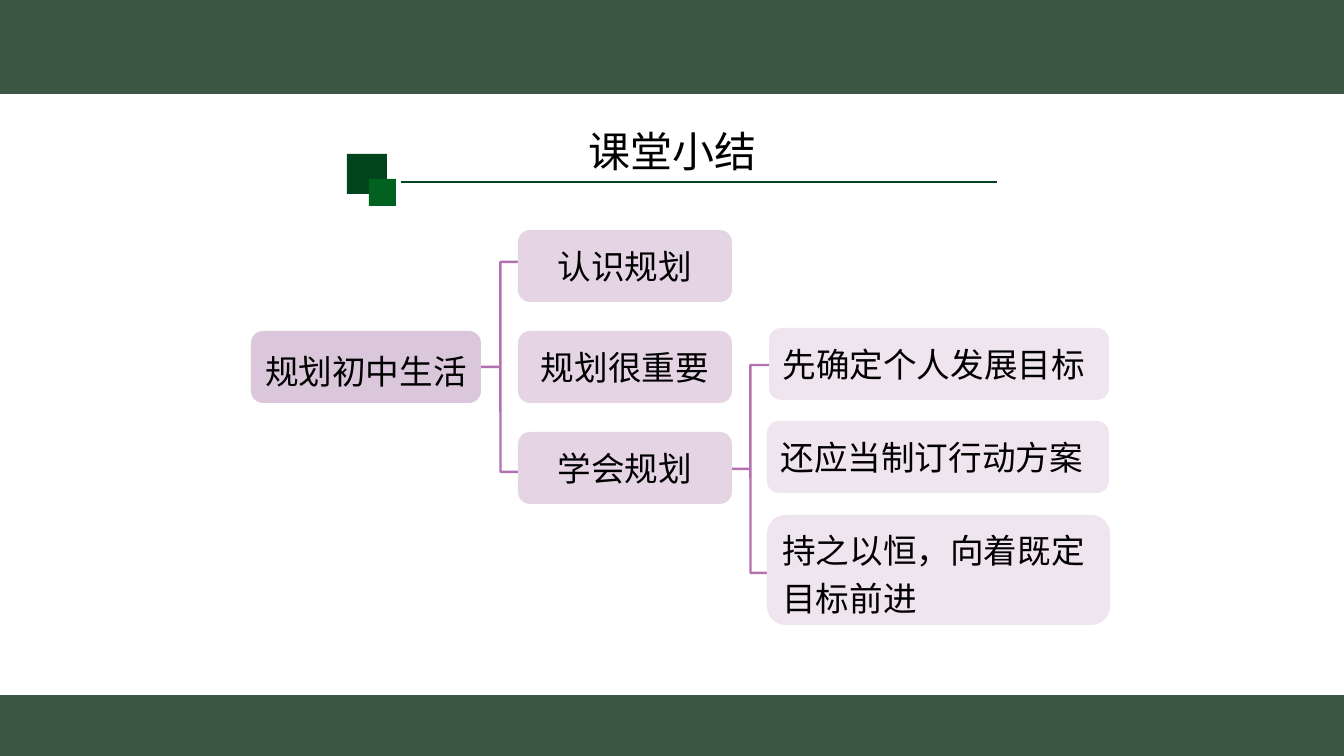
from lxml import etree
from pptx import Presentation
from pptx import util as u
from pptx.dml.color import RGBColor
from pptx.enum import shapes, text
from pptx.oxml.ns import qn

FONT = "Noto Sans CJK SC"
BAND, DARK, LEAF = "3B5643", "01431D", "01621F"
ROOT, BRANCH, DETAIL, BRACE = "DBC7DB", "E4D4E4", "EFE5EF", "B371AF"
WIDTH, HEIGHT = 1344, 756
LEFT, CENTER = text.PP_ALIGN.LEFT, text.PP_ALIGN.CENTER


def px(length):
    return u.Emu(round(length * 914400 / 100.8))


def color(value):
    return RGBColor.from_string(value)


class SummarySlide:
    def __init__(self, page):
        self.page = page

    def shape(self, kind, area, fill=None):
        shape = self.page.shapes.add_shape(kind, *map(px, area))
        shape.shadow.inherit = False
        shape.line.fill.background()
        if fill:
            shape.fill.solid()
            shape.fill.fore_color.rgb = color(fill)
        else:
            shape.fill.background()
        return shape

    def rect(self, area, fill):
        return self.shape(shapes.MSO_SHAPE.RECTANGLE, area, fill)

    def brace(self, area):
        """Left brace with square corners, which reads as a tree bracket."""
        brace = self.shape(shapes.MSO_SHAPE.LEFT_BRACE, area)
        brace.adjustments[0] = 0
        brace.line.color.rgb = color(BRACE)
        brace.line.width = u.Pt(1.75)

    def rule(self, x1, x2, y):
        rule = self.page.shapes.add_connector(
            shapes.MSO_CONNECTOR.STRAIGHT, *map(px, (x1, y, x2, y)))
        rule.line.color.rgb = color(DARK)
        rule.line.width = u.Pt(1)
        etree.SubElement(rule._element.spPr, qn("a:effectLst"))

    def fill_text(self, box, lines, size, **paragraph_format):
        frame = box.text_frame
        frame.word_wrap = True
        for index, line in enumerate(lines):
            para = frame.add_paragraph() if index else frame.paragraphs[0]
            for name, value in paragraph_format.items():
                setattr(para, name, value)
            span = para.add_run()
            span.text = line
            span.font.name = FONT
            span.font.size = u.Pt(size)
            span.font.color.rgb = color("000000")
            etree.SubElement(span._r.get_or_add_rPr(), qn("a:ea"), typeface=FONT)

    def title(self, area, line):
        box = self.page.shapes.add_textbox(*map(px, area))
        self.fill_text(box, [line], 30, alignment=CENTER, line_spacing=0.9)

    def node(self, area, fill, lines, alignment=CENTER, line_spacing=1.0):
        box = self.shape(shapes.MSO_SHAPE.ROUNDED_RECTANGLE, area, fill)
        margins = {"margin_left": px(10), "margin_right": 0, "margin_top": 0,
                   "margin_bottom": 0, "vertical_anchor": text.MSO_ANCHOR.MIDDLE}
        if alignment == CENTER:
            margins["margin_left"] = 0
        for name, value in margins.items():
            setattr(box.text_frame, name, value)
        self.fill_text(box, lines, 24, alignment=alignment, line_spacing=line_spacing)


def main():
    deck = Presentation()
    deck.slide_width, deck.slide_height = px(WIDTH), px(HEIGHT)
    slide = SummarySlide(deck.slides.add_slide(deck.slide_layouts[6]))

    slide.rect((0, 0, WIDTH, 94), BAND)
    slide.rect((0, 695, WIDTH, 61), BAND)
    slide.rule(401, 997, 182)
    slide.rect((347, 154, 40, 40), DARK)
    slide.rect((369, 179, 27, 27), LEAF)
    slide.title((220, 126, 905, 64), "课堂小结")

    slide.brace((481, 262, 39, 210))
    slide.brace((731, 365, 39, 208))
    slide.node((251, 331, 230, 72), ROOT, ["规划初中生活"], line_spacing=1.2)
    for row, label in enumerate(["认识规划", "规划很重要", "学会规划"]):
        slide.node((518, 230 + 101 * row, 214, 72), BRANCH, [label])

    details = [
        ((769, 328, 340, 72), ["先确定个人发展目标"], 1.0),
        ((767, 421, 342, 72), ["还应当制订行动方案"], 1.0),
        ((767, 515, 343, 110), ["持之以恒，向着既定", "目标前进"], 1.2),
    ]
    for area, lines, spacing in details:
        slide.node(area, DETAIL, lines, LEFT, spacing)

    deck.save("out.pptx")


if __name__ == "__main__":
    main()
